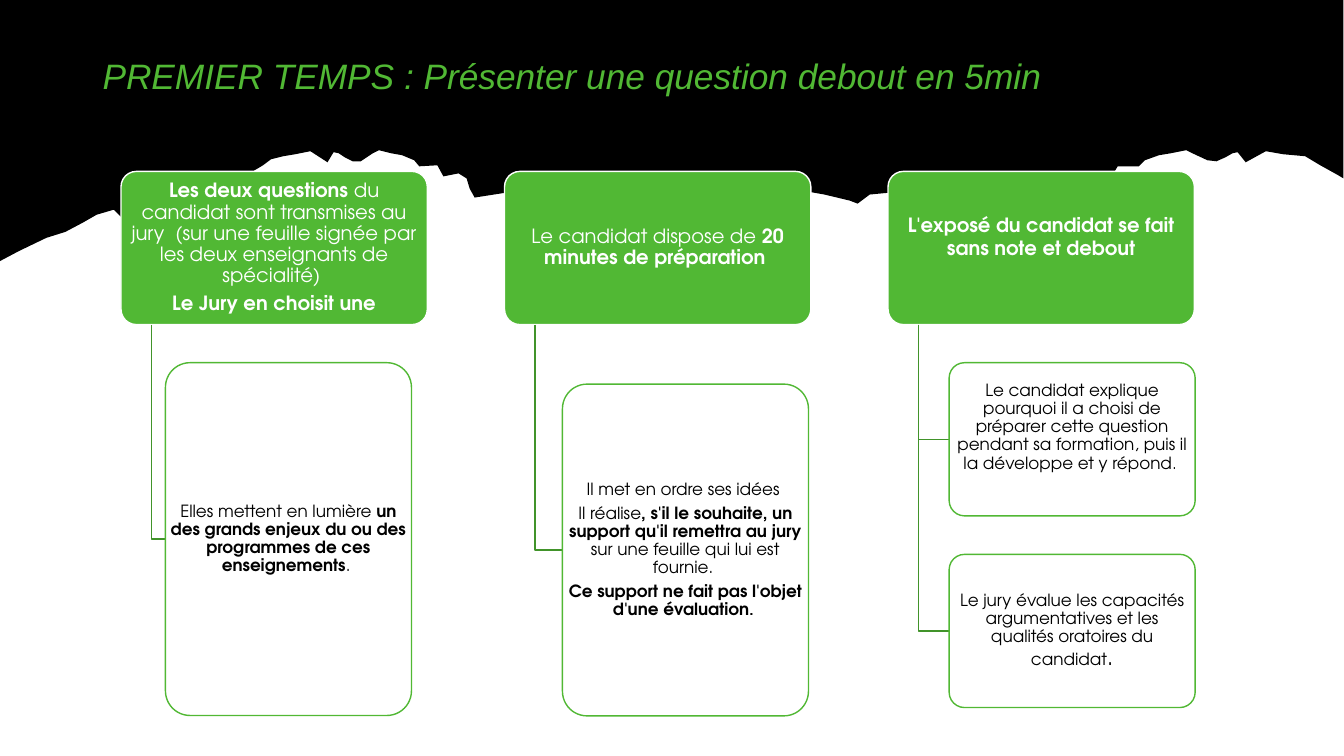
import pptx
import pptx.util
import pptx.dml.color
import pptx.enum.shapes
import pptx.enum.text
from pptx.util import Cm, Pt

COLORS = {"green": "51B834", "branch": "41932A", "white": "FFFFFF", "black": "000000"}
TITLE_FONT, BODY_FONT = "Arial", "TeX Gyre Adventor"
TITLE_ONLY = 5

# Columns, in cm
COLUMN_LEFT, COLUMN_STEP = 3.05, 9.665
HEADER_TOP, HEADER_WIDTH, HEADER_HEIGHT = 4.32, 7.72, 3.86
TRUNK_OFFSET, CARD_WIDTH = 0.77, 6.2

# Lower edge of the black band from left to right, in hundredths of an inch
TORN_EDGE = [
    (0, 259), (19, 249), (46, 236), (65, 230), (82, 221), (96, 213), (113, 208), (120, 215),
    (134, 210), (150, 206), (197, 195), (239, 177), (261, 164), (269, 158), (281, 155),
    (293, 153), (308, 150), (325, 161), (331, 151), (336, 152), (342, 156), (350, 160),
    (358, 160), (370, 152), (376, 149), (388, 152), (399, 154), (411, 159), (416, 165),
    (434, 164), (440, 175), (455, 172), (463, 177), (466, 187), (471, 196), (503, 191),
    (527, 180), (538, 178), (560, 180), (571, 190), (577, 192), (586, 191), (587, 196),
    (587, 208), (597, 202), (610, 194), (629, 191), (648, 193), (654, 199), (657, 202),
    (664, 199), (686, 193), (701, 190), (708, 186), (713, 186), (736, 188), (741, 189),
    (747, 194), (754, 189), (760, 188), (787, 186), (793, 186), (801, 190), (818, 193),
    (843, 199), (851, 202), (855, 199), (863, 193), (884, 191), (904, 194), (921, 202),
    (933, 208), (932, 196), (935, 191), (944, 192), (950, 190), (957, 181), (989, 178),
    (1002, 180), (1029, 190), (1067, 196), (1076, 177), (1083, 172), (1103, 175),
    (1109, 165), (1130, 165), (1136, 159), (1150, 154), (1162, 152), (1177, 149),
    (1183, 152), (1198, 159), (1207, 160), (1216, 156), (1223, 152), (1228, 151),
    (1236, 161), (1256, 150), (1273, 153), (1295, 155), (1310, 164), (1328, 174), (1333, 177),
]

# Texts: paragraphs of runs (text, bold[, size])
COLUMNS = [
    {
        "header": [
            [("Les deux questions ", True),
             ("du candidat sont transmises au jury  (sur une feuille signée par "
              "les deux enseignants de spécialité) ", False)],
            [("Le Jury en choisit une", True)],
        ],
        "cards": [{"offset": 1.12, "top": 9.14, "height": 8.89, "text": [
            [("Elles mettent en lumière ", False),
             ("un des grands enjeux du ou des programmes de ces enseignements", True),
             (". ", False)],
        ]}],
    },
    {
        "header": [[("Le candidat dispose de ", False), ("20 minutes de préparation ", True)]],
        "cards": [{"offset": 1.46, "top": 9.68, "height": 8.36, "text": [
            [("Il met en ordre ses idées ", False)],
            [("Il réalise", False),
             (", s'il le souhaite, un support qu'il remettra au jury ", True),
             ("sur une feuille qui lui est fournie. ", False)],
            [("Ce support ne fait pas l'objet d'une évaluation", True), (". ", True, 11)],
        ]}],
    },
    {
        "header": [[("L'exposé du candidat se fait sans note et debout", True)]],
        "header_style": {"lift": 0.6, "line_spacing": 1.0, "after": 0},
        "cards": [
            {"offset": 1.54, "top": 9.14, "height": 3.86, "style": {"lift": 0.6}, "text": [
                [("Le candidat explique pourquoi il a choisi de préparer cette question "
                  "pendant sa formation, puis il la développe et y répond", False),
                 (". ", False, 11)],
            ]},
            {"offset": 1.54, "top": 13.97, "height": 3.86, "text": [
                [("Le jury évalue les capacités argumentatives et les qualités oratoires "
                  "du candidat", False), (".", False, 16)],
            ]},
        ],
    },
]


def rgb(color):
    return pptx.dml.color.RGBColor.from_string(COLORS[color])


def apply(target, values):
    for name, value in values.items():
        setattr(target, name, value)


def format_font(font, color, **values):
    apply(font, values)
    font.color.rgb = rgb(color)


def add_outline(slide, points, unit, close):
    """Freeform through points, with unit as the length of one step."""
    builder = slide.shapes.build_freeform(*points[0], scale=unit)
    builder.add_line_segments(points[1:], close=close)
    outline = builder.convert_to_shape()
    outline.shadow.inherit = False
    return outline


def add_band(slide):
    band = add_outline(slide, TORN_EDGE + [(1333, 0), (0, 0)], Cm(0.0254), True)
    band.fill.solid()
    band.fill.fore_color.rgb = rgb("black")
    band.line.fill.background()


def add_title(slide, text):
    title = slide.shapes.title
    apply(title, {"left": Cm(2.33), "top": Cm(1.02), "width": Cm(29.21), "height": Cm(2.59)})
    frame = title.text_frame
    frame.text = text
    apply(frame, {"vertical_anchor": pptx.enum.text.MSO_ANCHOR.MIDDLE, "word_wrap": True,
                  "auto_size": pptx.enum.text.MSO_AUTO_SIZE.NONE, "margin_bottom": Cm(0.84)})
    line = frame.paragraphs[0]
    apply(line, {"alignment": pptx.enum.text.PP_ALIGN.LEFT, "line_spacing": 0.9})
    format_font(line.runs[0].font, "green", name=TITLE_FONT, size=Pt(25.2), italic=True)


def add_caption(slide, box, paragraphs, color, size, lift=0, line_spacing=0.9, after=0.35):
    """Centred text; lift is extra bottom margin, after is a share of the text size."""
    frame = slide.shapes.add_textbox(*box).text_frame
    apply(frame, {"word_wrap": True, "vertical_anchor": pptx.enum.text.MSO_ANCHOR.MIDDLE,
                  "margin_left": Cm(0.08), "margin_right": Cm(0.08),
                  "margin_top": Cm(0.05), "margin_bottom": Cm(0.05 + lift)})
    for index, runs in enumerate(paragraphs):
        paragraph = frame.add_paragraph() if index else frame.paragraphs[0]
        apply(paragraph, {"alignment": pptx.enum.text.PP_ALIGN.CENTER,
                          "line_spacing": line_spacing, "space_after": Pt(size * after)})
        for text, bold, *own_size in runs:
            run = paragraph.add_run()
            run.text = text
            format_font(run.font, color, name=BODY_FONT, bold=bold,
                        size=Pt(own_size[0] if own_size else size))


def add_panel(slide, box, fill, border):
    panel = slide.shapes.add_shape(pptx.enum.shapes.MSO_SHAPE.ROUNDED_RECTANGLE, *box)
    panel.adjustments[0] = 0.1
    panel.shadow.inherit = False
    panel.fill.solid()
    panel.fill.fore_color.rgb = rgb(fill)
    panel.line.color.rgb = rgb(border)
    panel.line.width = Pt(1)


def add_branch(slide, trunk, card_left, middle):
    corners = [(trunk, HEADER_TOP + HEADER_HEIGHT), (trunk, middle), (card_left, middle)]
    points = [(round(x * 100), round(y * 100)) for x, y in corners]
    branch = add_outline(slide, points, Cm(0.01), False)
    branch.fill.background()
    branch.line.color.rgb = rgb("branch")
    branch.line.width = Pt(1)


def add_column(slide, left, column):
    header = [Cm(n) for n in (left, HEADER_TOP, HEADER_WIDTH, HEADER_HEIGHT)]
    add_panel(slide, header, "green", "white")
    add_caption(slide, header, column["header"], "white", 14, **column.get("header_style", {}))
    for card in column["cards"]:
        card_left = left + card["offset"]
        add_branch(slide, left + TRUNK_OFFSET, card_left, card["top"] + card["height"] / 2)
        box = [Cm(n) for n in (card_left, card["top"], CARD_WIDTH, card["height"])]
        add_panel(slide, box, "white", "green")
        add_caption(slide, box, card["text"], "black", 12, **card.get("style", {}))


def main():
    deck = pptx.Presentation()
    apply(deck, {"slide_width": Cm(33.87), "slide_height": Cm(19.05)})
    slide = deck.slides.add_slide(deck.slide_layouts[TITLE_ONLY])

    # Torn black band and title; the band goes behind the title
    add_band(slide)
    title = slide.shapes.title
    slide.shapes[-1].element.addnext(title.element)
    add_title(slide, "PREMIER TEMPS : Présenter une question debout en 5min")

    # Three columns of a header and its cards
    for index, column in enumerate(COLUMNS):
        add_column(slide, COLUMN_LEFT + index * COLUMN_STEP, column)

    deck.save("out.pptx")


if __name__ == "__main__":
    main()
